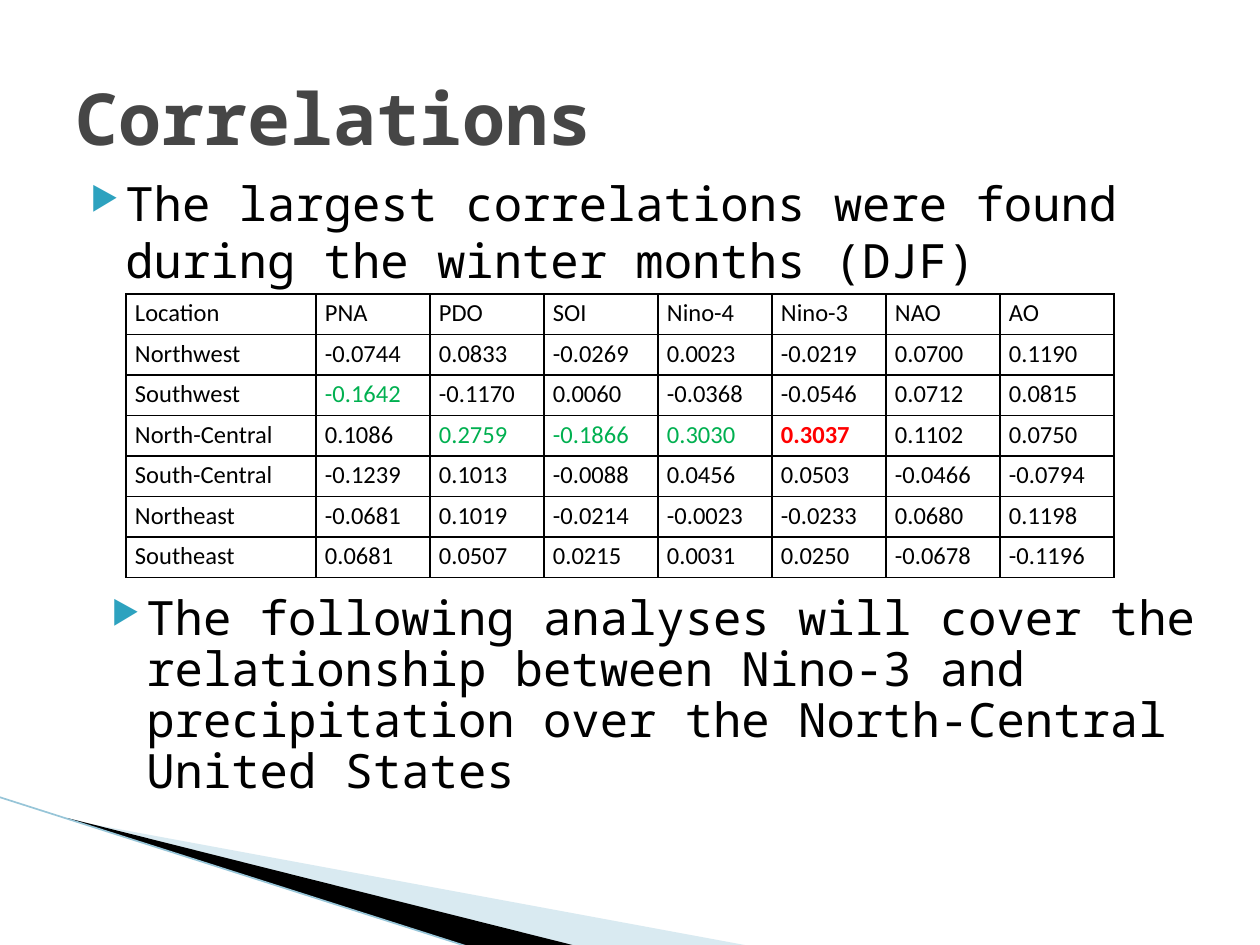
"""Build the slide of winter correlations between climate indices and regional precipitation."""
from lxml import etree
from pptx import Presentation
from pptx import util as u
from pptx.dml.color import RGBColor
from pptx.enum import shapes, text
from pptx.oxml import ns

SCALE = 914400 / 126
MONO = "Noto Sans Mono"
GREEN, RED = "00B050", "FF0000"


def px(length):
    return u.Emu(round(length * SCALE))


def write(frame, content, font=MONO, size=27, color="000000", bold=False, spacing=None,
          before=0, bullet=None, anchor=text.MSO_ANCHOR.TOP):
    frame.word_wrap = True
    frame.vertical_anchor = anchor
    paragraph = frame.paragraphs[0]
    paragraph.text = content
    paragraph.space_before = u.Pt(before)
    if spacing:
        paragraph.line_spacing = spacing
    if bullet:
        properties = paragraph._p.get_or_add_pPr()
        properties.set("marL", str(px(50)))
        properties.set("indent", str(px(-35)))
        bullet_color = etree.SubElement(properties, ns.qn("a:buClr"))
        etree.SubElement(bullet_color, ns.qn("a:srgbClr"), val=bullet)
        etree.SubElement(properties, ns.qn("a:buSzPct"), val="68000")
        etree.SubElement(properties, ns.qn("a:buChar"), char="▶")
    style = paragraph.runs[0].font
    style.name, style.size, style.bold = font, u.Pt(size), bold
    style.color.rgb = RGBColor.from_string(color)


presentation = Presentation()
presentation.slide_width, presentation.slide_height = px(1260), px(945)
slide = presentation.slides.add_slide(presentation.slide_layouts[6])

wedges = [
    ([(69, 820), (750, 946), (575, 946), (69, 819)], "A0CBDC", 40),
    ([(67, 818), (576, 946), (469, 947), (68, 819)], "000000", 100),
]
for points, color, opacity in wedges:
    builder = slide.shapes.build_freeform(*points[0], scale=SCALE)
    builder.add_line_segments(points[1:], close=True)
    wedge = builder.convert_to_shape()
    wedge.shadow.inherit = False
    wedge.fill.solid()
    wedge.fill.fore_color.rgb = RGBColor.from_string(color)
    wedge.line.fill.background()
    if opacity < 100:
        fill_color = wedge._element.spPr.find(".//" + ns.qn("a:srgbClr"))
        etree.SubElement(fill_color, ns.qn("a:alpha"), val=str(opacity * 1000))

edge = slide.shapes.add_connector(shapes.MSO_CONNECTOR.STRAIGHT, px(-1), px(797), px(469), px(947))
edge.line.color.rgb = RGBColor.from_string("97C5D8")
edge.line.width = u.Pt(0.95)
etree.SubElement(edge._element.spPr, ns.qn("a:effectLst"))

bullet_format = {"before": 4, "bullet": "2DA2BF"}
text_boxes = [
    ((63, 168, 1134, 136), "The largest correlations were found during the winter months (DJF)",
     bullet_format),
    ((63, 38, 1134, 157), "Correlations",
     {"size": 41, "color": "464646", "bold": True, "anchor": text.MSO_ANCHOR.MIDDLE}),
    ((84, 588, 1134, 231),
     "The following analyses will cover the relationship between Nino-3 and "
     "precipitation over the North-Central United States",
     {**bullet_format, "spacing": 0.9}),
]
for box, content, options in text_boxes:
    shape = slide.shapes.add_textbox(*map(px, box))
    write(shape.text_frame, content, **options)

correlations = [
    ["Location", "PNA", "PDO", "SOI", "Nino-4", "Nino-3", "NAO", "AO"],
    ["Northwest", "-0.0744", "0.0833", "-0.0269", "0.0023", "-0.0219", "0.0700", "0.1190"],
    ["Southwest", "-0.1642", "-0.1170", "0.0060", "-0.0368", "-0.0546", "0.0712", "0.0815"],
    ["North-Central", "0.1086", "0.2759", "-0.1866", "0.3030", "0.3037", "0.1102", "0.0750"],
    ["South-Central", "-0.1239", "0.1013", "-0.0088", "0.0456", "0.0503", "-0.0466", "-0.0794"],
    ["Northeast", "-0.0681", "0.1019", "-0.0214", "-0.0023", "-0.0233", "0.0680", "0.1198"],
    ["Southeast", "0.0681", "0.0507", "0.0215", "0.0031", "0.0250", "-0.0678", "-0.1196"],
]
highlights = {(2, 1): GREEN, (3, 2): GREEN, (3, 3): GREEN, (3, 4): GREEN, (3, 5): RED}
table = slide.shapes.add_table(7, 8, px(126), px(294), px(988), px(284)).table
table.first_row = table.horz_banding = False
for index, column in enumerate(table.columns):
    column.width = px(114 if index else 190)
for row, values in enumerate(correlations):
    for column, value in enumerate(values):
        cell = table.cell(row, column)
        cell.margin_left = cell.margin_right = px(9)
        cell.margin_top = cell.margin_bottom = 0
        color = highlights.get((row, column), "000000")
        write(cell.text_frame, value, font="Calibri", size=14, color=color,
              bold=color == RED, spacing=1.15)
        properties = cell._tc.get_or_add_tcPr()
        for side in ("a:lnL", "a:lnR", "a:lnT", "a:lnB"):
            border = etree.SubElement(properties, ns.qn(side), w=str(u.Pt(1)))
            border_fill = etree.SubElement(border, ns.qn("a:solidFill"))
            etree.SubElement(border_fill, ns.qn("a:srgbClr"), val="000000")
        cell.fill.background()

presentation.save("out.pptx")
